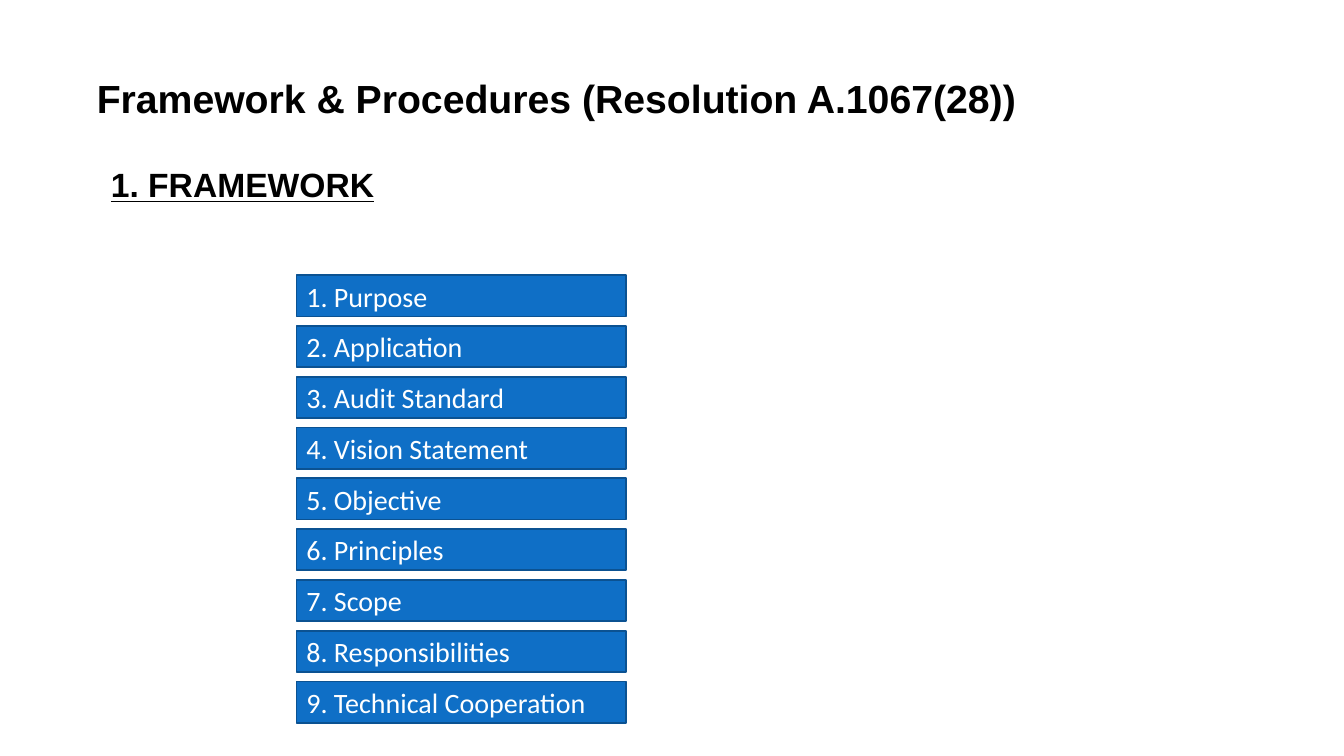
from dataclasses import dataclass

from lxml import etree
from pptx import Presentation
from pptx.dml.color import RGBColor
from pptx.enum.shapes import MSO_SHAPE
from pptx.enum.text import MSO_ANCHOR, MSO_AUTO_SIZE, PP_ALIGN
from pptx.oxml.ns import qn
from pptx.util import Inches, Pt

RECT = MSO_SHAPE.RECTANGLE
TOP, MIDDLE = MSO_ANCHOR.TOP, MSO_ANCHOR.MIDDLE
LEFT = PP_ALIGN.LEFT
NO_FIT = MSO_AUTO_SIZE.NONE

TOPICS = ["Purpose", "Application", "Audit Standard", "Vision Statement",
          "Objective", "Principles", "Scope", "Responsibilities",
          "Technical Cooperation"]


@dataclass(frozen=True)
class Theme:
    heading_font: str = "Arial"
    body_font: str = "Calibri"
    title_size: int = 28
    section_size: int = 24
    topic_size: int = 20
    line_width: float = 1.25
    ink: RGBColor = RGBColor(0x00, 0x00, 0x00)
    light: RGBColor = RGBColor(0xFF, 0xFF, 0xFF)
    fill: RGBColor = RGBColor(0x0F, 0x6F, 0xC6)
    line: RGBColor = RGBColor(0x0B, 0x52, 0x92)


class SlideBuilder:
    def __init__(self, prs, theme):
        self.theme = theme
        self.s = prs.slides.add_slide(prs.slide_layouts[1])

    def set_text(self, sp, text, font, size, color, anchor, bold=False, underline=False):
        tf = sp.text_frame
        tf.text = text
        tf.word_wrap = True
        tf.auto_size = NO_FIT
        tf.vertical_anchor = anchor
        p = tf.paragraphs[0]
        p.alignment = LEFT
        p.space_before = Pt(0)
        r = p.runs[0]
        r.font.name = font
        r.font.size = Pt(size)
        r.font.bold = bold
        r.font.underline = underline
        r.font.color.rgb = color
        return p

    def place(self, sp, left, top, width, height):
        sp.left, sp.top = Inches(left), Inches(top)
        sp.width, sp.height = Inches(width), Inches(height)

    def title(self, text, *box):
        t = self.theme
        sp = self.s.shapes.title
        self.place(sp, *box)
        self.set_text(sp, text, t.heading_font, t.title_size, t.ink, MIDDLE, bold=True)

    def section(self, text, *box):
        t = self.theme
        sp = self.s.placeholders[1]
        self.place(sp, *box)
        p = self.set_text(sp, text, t.heading_font, t.section_size, t.ink, TOP,
                          bold=True, underline=True)
        pPr = p._p.get_or_add_pPr()
        pPr.set("marL", "0")
        pPr.set("indent", "0")
        etree.SubElement(pPr, qn("a:buNone"))

    def topic(self, text, *box):
        t = self.theme
        sp = self.s.shapes.add_shape(RECT, *map(Inches, box))
        sp.shadow.inherit = False
        sp.fill.solid()
        sp.fill.fore_color.rgb = t.fill
        sp.line.color.rgb = t.line
        sp.line.width = Pt(t.line_width)
        self.set_text(sp, text, t.body_font, t.topic_size, t.light, MIDDLE)


def main():
    prs = Presentation()
    prs.slide_width, prs.slide_height = Inches(13.33), Inches(7.5)
    slide = SlideBuilder(prs, Theme())
    slide.title("Framework & Procedures (Resolution A.1067(28))", 0.86, 0.65, 9.4, 0.64)
    slide.section("1. FRAMEWORK", 1, 1.58, 2.92, 0.53)

    first_top, last_top = 2.73, 6.76
    pitch = (last_top - first_top) / (len(TOPICS) - 1)
    for i, topic in enumerate(TOPICS):
        slide.topic(f"{i + 1}. {topic}", 2.94, first_top + i * pitch, 3.27, 0.41)

    prs.save("out.pptx")


if __name__ == "__main__":
    main()
